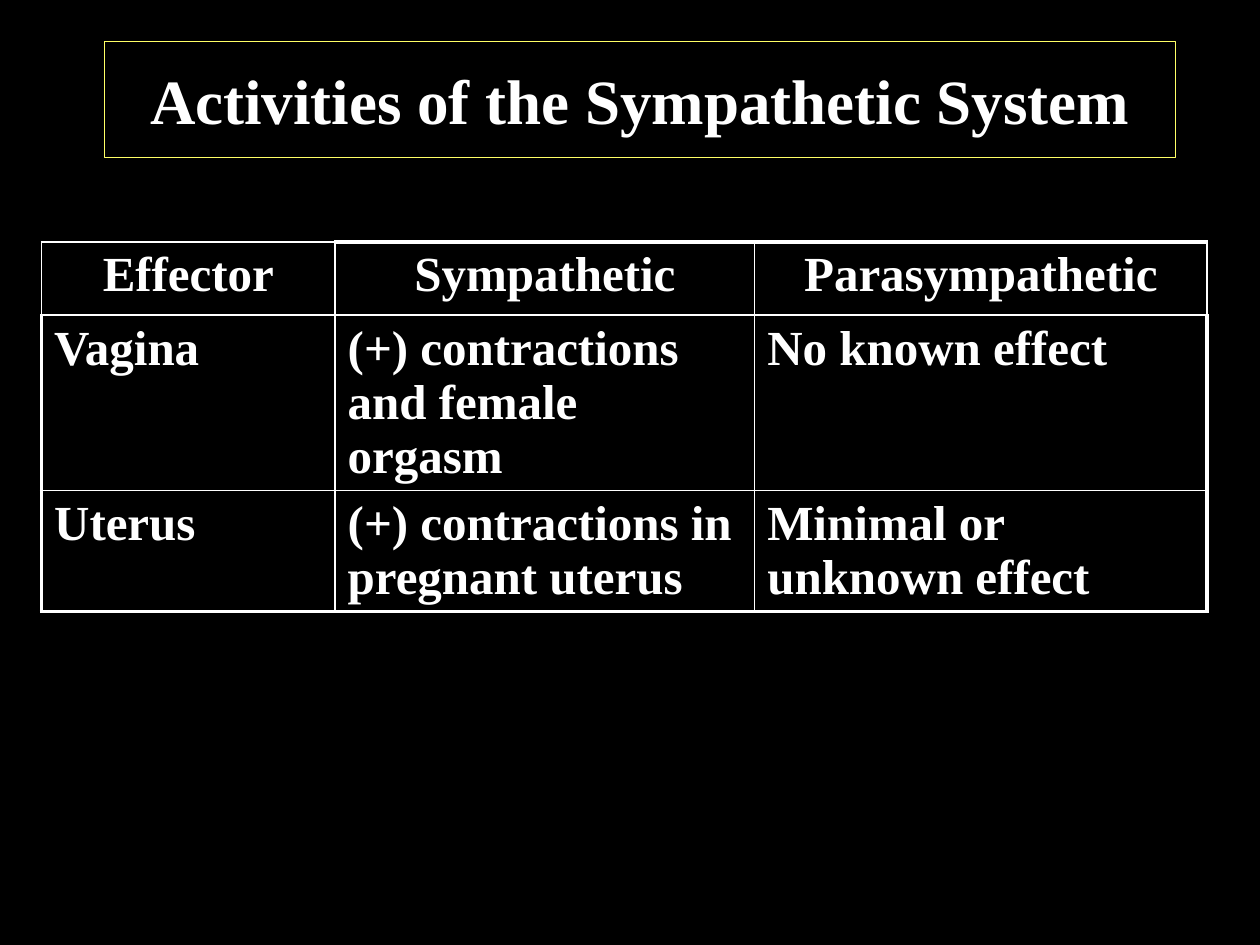
from lxml import etree
from pptx import Presentation
from pptx.dml.color import RGBColor
from pptx.enum import shapes, text
from pptx.oxml.ns import qn
from pptx.util import Inches, Pt

BLACK = RGBColor(0, 0, 0)
WHITE = RGBColor(255, 255, 255)
YELLOW = RGBColor(255, 255, 102)
THIN, THICK = Pt(1), Pt(2.25)


def style_text(tf, size, align):
    p = tf.paragraphs[0]
    p.alignment = align
    font = p.runs[0].font
    font.name, font.size, font.bold = "Times New Roman", Pt(size), True
    font.color.rgb = WHITE


def set_borders(cell, widths):
    """Draw white borders; widths are left, right, top, bottom."""
    tcPr = cell._tc.get_or_add_tcPr()
    for i, (side, width) in enumerate(zip("LRTB", widths)):
        ln = etree.Element(qn(f"a:ln{side}"), w=str(width))
        fill = etree.SubElement(ln, qn("a:solidFill"))
        etree.SubElement(fill, qn("a:srgbClr"), val=str(WHITE))
        tcPr.insert(i, ln)


prs = Presentation()
prs.slide_width, prs.slide_height = Inches(10), Inches(7.5)
s = prs.slides.add_slide(prs.slide_layouts[6])
s.background.fill.solid()
s.background.fill.fore_color.rgb = BLACK

title = s.shapes.add_shape(shapes.MSO_SHAPE.RECTANGLE, Inches(0.83), Inches(0.33),
                           Inches(8.5), Inches(0.92))
title.shadow.inherit = False
title.fill.background()
title.line.color.rgb = YELLOW
title.line.width = Pt(0.75)
title.text_frame.text = "Activities of the Sympathetic System"
title.text_frame.vertical_anchor = text.MSO_ANCHOR.MIDDLE
style_text(title.text_frame, 36, text.PP_ALIGN.CENTER)

rows = [
    ("Effector", "Sympathetic", "Parasympathetic"),
    ("Vagina", "(+) contractions and female orgasm", "No known effect"),
    ("Uterus", "(+) contractions in pregnant uterus", "Minimal or unknown effect"),
]
col_widths = [2.33, 3.33, 3.59]
row_heights = [0.58, 1.39, 0.96]
table = s.shapes.add_table(3, 3, Inches(0.33), Inches(1.92),
                           Inches(sum(col_widths)), Inches(sum(row_heights))).table
for col, width in zip(table.columns, col_widths):
    col.width = Inches(width)
for row, height in zip(table.rows, row_heights):
    row.height = Inches(height)

for i, row in enumerate(rows):
    for j, label in enumerate(row):
        cell = table.cell(i, j)
        cell.text_frame.text = label
        style_text(cell.text_frame, 28,
                   text.PP_ALIGN.CENTER if i == 0 else text.PP_ALIGN.LEFT)
        cell.fill.solid()
        cell.fill.fore_color.rgb = BLACK
        # The outer frame is thick, except at the header's sides and first cell
        thick = (i > 0 and j == 0, i > 0 and j == 2, i == 0 and j > 0, i == 2)
        set_borders(cell, [THICK if edge else THIN for edge in thick])

prs.save("out.pptx")
